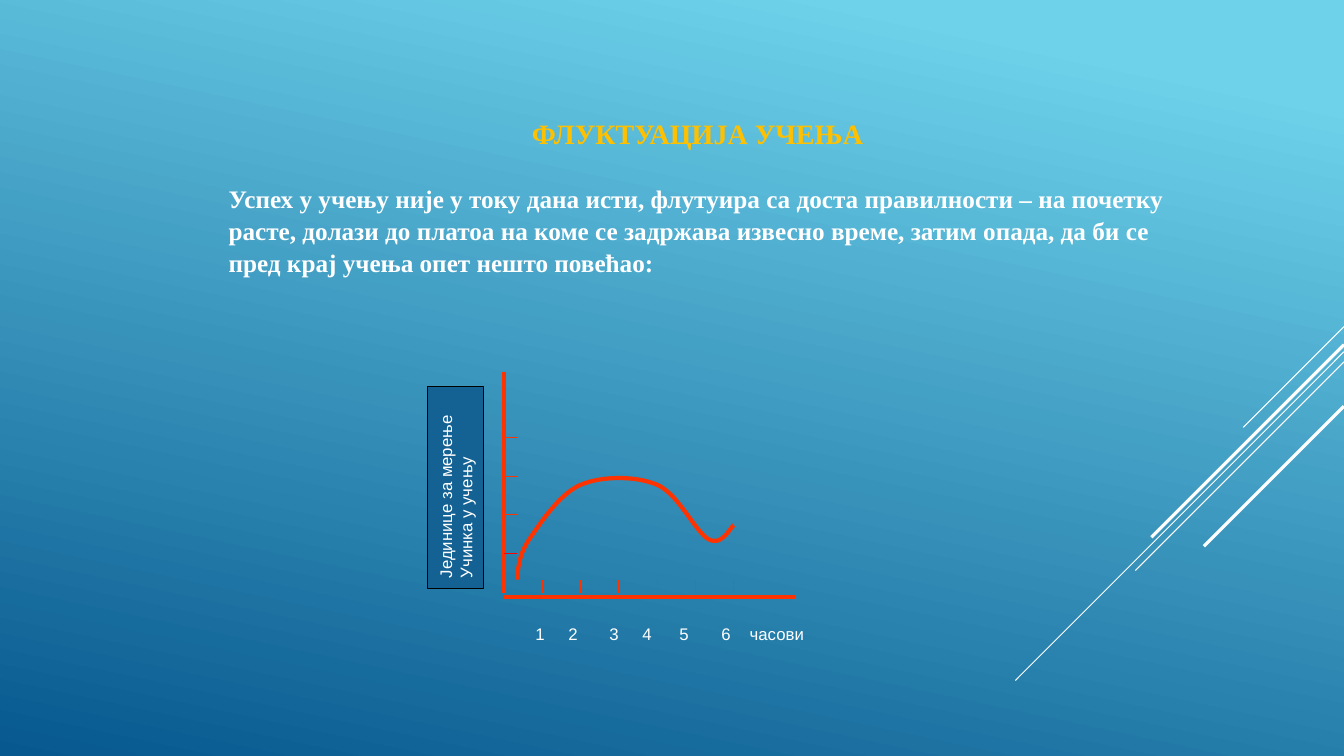
"""Build a slide on how learning success fluctuates over the hours of a day."""
from dataclasses import dataclass

from lxml import etree
from pptx import Presentation
from pptx.dml.color import RGBColor
from pptx.enum import shapes, text
from pptx.oxml.ns import qn
from pptx.util import Pt

WHITE = RGBColor(0xFF, 0xFF, 0xFF)
BLACK = RGBColor(0, 0, 0)
GOLD = RGBColor(0xFF, 0xC0, 0x00)
ORANGE = RGBColor(0xFF, 0x33, 0x00)
RED = RGBColor(0xFF, 0x00, 0x00)
PANEL = RGBColor(0x14, 0x61, 0x94)
SKY = RGBColor(0x6E, 0xD2, 0xEB)
DEEP = RGBColor(0x06, 0x58, 0x8E)

SERIF = "Times New Roman"
SANS = "Arial"
SLIDE_W, SLIDE_H = 960, 540
TEXT_LEFT, TEXT_W = 156.24, 684
AXIS_X, AXIS_Y = 360, 426.24
TICK_BASE = 423.36
TICK_LEN = 9.36
CURVE_STEPS = 24


@dataclass
class Line:
    x1: float
    y1: float
    x2: float
    y2: float
    color: RGBColor
    width: float = 0.75


@dataclass
class Label:
    content: str
    x: float
    y: float
    w: float
    h: float
    size: float
    font: str
    bold: bool = False
    align: text.PP_ALIGN = text.PP_ALIGN.LEFT
    color: RGBColor = WHITE
    spacing: float = 1.0
    margin: float = 7.2


STRIPES = [
    Line(SLIDE_W, y, SLIDE_W - run, y + run, WHITE, width)
    for y, run, width in [
        (233.28, 72, 0.75),
        (251.28, 234.72, 0.75),
        (258.48, 149.04, 0.75),
        (246.24, 137.52, 2.25),
        (290.16, 100.08, 2.25),
    ]
]
AXES = [
    Line(AXIS_X, 265.68, AXIS_X, TICK_BASE, ORANGE, 3),
    Line(AXIS_X, AXIS_Y, 568.08, AXIS_Y, ORANGE, 3),
]
HOUR_TICKS = [
    Line(x, TICK_BASE, x, TICK_BASE - TICK_LEN, ORANGE)
    for x in (387.36 + 27.36 * i for i in range(6))
]
UNIT_TICKS = [
    Line(AXIS_X, y, AXIS_X + TICK_LEN, y, ORANGE if i else RED)
    for i, y in enumerate(395.28 - 27.6 * i for i in range(4))
]

CURVE_START = (369.36, 414)
CURVE = [
    ((370.08, 405.36), (370.8, 396), (378, 385.2)),
    ((385.92, 373.68), (399.6, 352.8), (414.72, 346.32)),
    ((429.84, 339.84), (454.32, 339.84), (469.44, 346.32)),
    ((484.56, 352.8), (496.8, 380.16), (506.16, 385.2)),
    ((515.52, 390.24), (521.28, 377.28), (524.16, 375.12)),
]

BODY = Label(
    "Успех у учењу није у току дана исти, флутуира са доста правилности – на почетку "
    "расте, долази до платоа на коме се задржава извесно време, затим опада, да би се "
    "пред крај учења опет нешто повећао:",
    TEXT_LEFT, 127.7, TEXT_W, 72.5, 18, SERIF, bold=True, spacing=1.05,
)
HOUR_CENTRES = [385.7, 409.3, 438.6, 462.1, 488.6, 518.6]
HOURS = [
    Label(str(i), x - 10, 442, 20, 21, 12, SANS, align=text.PP_ALIGN.CENTER, margin=0)
    for i, x in enumerate(HOUR_CENTRES, 1)
]
HOURS.append(Label("часови", 535.5, 442, 60, 21, 12, SANS, margin=0))


def draw_line(slide, line: Line) -> None:
    sp = slide.shapes.add_connector(
        shapes.MSO_CONNECTOR.STRAIGHT,
        Pt(line.x1), Pt(line.y1), Pt(line.x2), Pt(line.y2),
    )
    sp.line.color.rgb = line.color
    sp.line.width = Pt(line.width)
    etree.SubElement(sp._element.spPr, qn("a:effectLst"))


def fill_text(sp, label: Label) -> None:
    tf = sp.text_frame
    tf.word_wrap = True
    tf.auto_size = text.MSO_AUTO_SIZE.NONE
    tf.vertical_anchor = text.MSO_ANCHOR.MIDDLE
    tf.margin_left = tf.margin_right = Pt(label.margin)
    tf.margin_top = tf.margin_bottom = Pt(3.6)
    tf.text = label.content
    for p in tf.paragraphs:
        p.alignment = label.align
        p.line_spacing = label.spacing
        p.font.name = label.font
        p.font.size = Pt(label.size)
        p.font.bold = label.bold
        p.font.color.rgb = label.color


def draw_label(slide, label: Label) -> None:
    sp = slide.shapes.add_textbox(Pt(label.x), Pt(label.y), Pt(label.w), Pt(label.h))
    fill_text(sp, label)


def draw_title(slide, label: Label) -> None:
    sp = slide.shapes.title
    sp.left, sp.top = Pt(label.x), Pt(label.y)
    sp.width, sp.height = Pt(label.w), Pt(label.h)
    fill_text(sp, label)


def draw_panel(slide, label: Label) -> None:
    sp = slide.shapes.add_shape(
        shapes.MSO_SHAPE.RECTANGLE, Pt(label.x), Pt(label.y), Pt(label.w), Pt(label.h)
    )
    sp.rotation = 270
    sp.shadow.inherit = False
    sp.fill.solid()
    sp.fill.fore_color.rgb = PANEL
    sp.line.color.rgb = BLACK
    sp.line.width = Pt(0.75)
    fill_text(sp, label)


def bezier(p0, p1, p2, p3, t: float) -> tuple[int, int]:
    s = 1 - t
    return tuple(
        Pt(s**3 * a + 3 * s * s * t * b + 3 * s * t * t * c + t**3 * d)
        for a, b, c, d in zip(p0, p1, p2, p3)
    )


def draw_curve(slide) -> None:
    points, start = [], CURVE_START
    for c1, c2, end in CURVE:
        points += [
            bezier(start, c1, c2, end, i / CURVE_STEPS) for i in range(1, CURVE_STEPS + 1)
        ]
        start = end
    builder = slide.shapes.build_freeform(Pt(CURVE_START[0]), Pt(CURVE_START[1]))
    builder.add_line_segments(points, close=False)
    sp = builder.convert_to_shape()
    sp.shadow.inherit = False
    sp.fill.background()
    sp.line.color.rgb = ORANGE
    sp.line.width = Pt(3)


def paint_background(slide) -> None:
    fill = slide.background.fill
    fill.gradient()
    fill.gradient_angle = 258
    for stop, position, color in zip(fill.gradient_stops, (0.1, 1), (SKY, DEEP)):
        stop.position = position
        stop.color.rgb = color


def main() -> None:
    prs = Presentation()
    prs.slide_width, prs.slide_height = Pt(SLIDE_W), Pt(SLIDE_H)
    slide = prs.slides.add_slide(prs.slide_layouts[5])
    paint_background(slide)
    for line in STRIPES + AXES + HOUR_TICKS + UNIT_TICKS:
        draw_line(slide, line)
    draw_curve(slide)
    draw_panel(slide, Label("Јединице за мерење\nУчинка у учењу",
                            253.44, 328.32, 144, 39.6, 12, SANS))
    draw_title(slide, Label("ФЛУКТУАЦИЈА УЧЕЊА", TEXT_LEFT, 80.5, TEXT_W, 30, 20, SERIF,
                            bold=True, align=text.PP_ALIGN.CENTER, color=GOLD))
    for label in [BODY, *HOURS]:
        draw_label(slide, label)
    prs.save("out.pptx")


if __name__ == "__main__":
    main()
